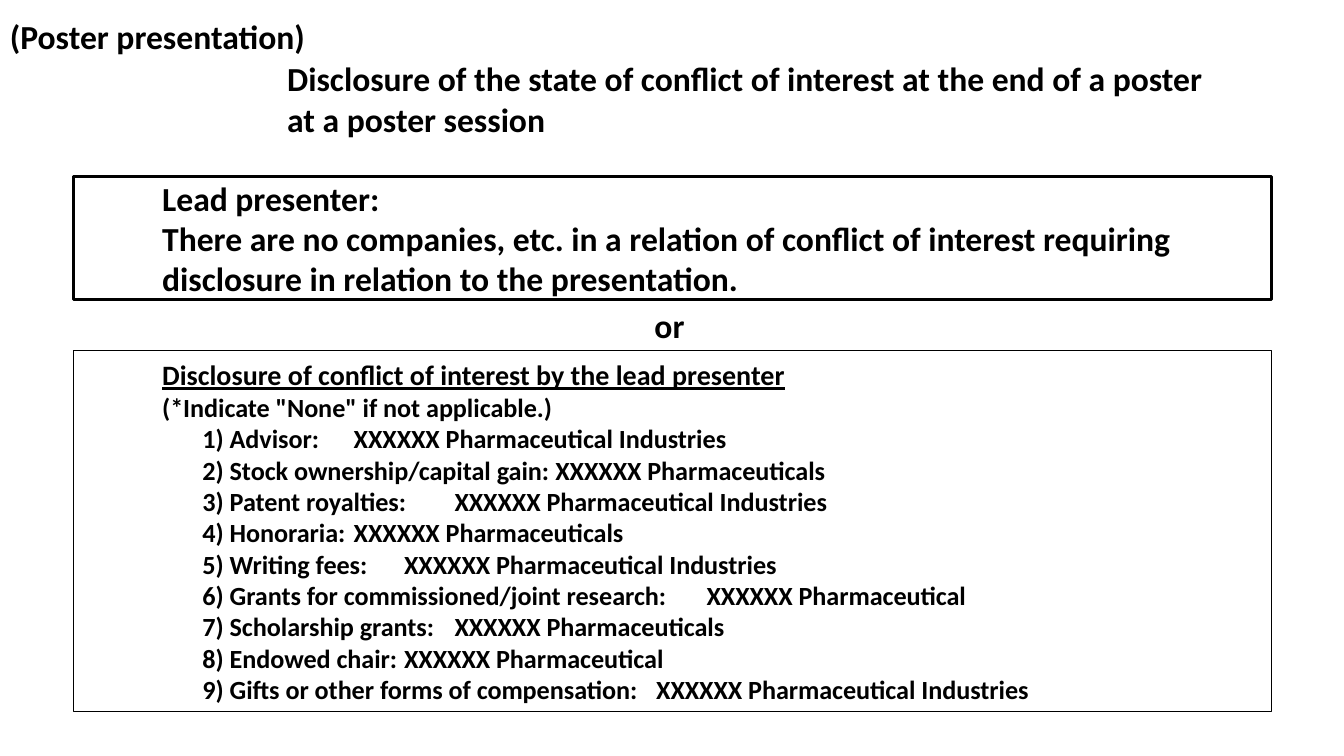
from dataclasses import dataclass

from pptx import Presentation
from pptx import util as u
from pptx.dml.color import RGBColor
from pptx.enum import shapes, text

EMU_PER_PX = 9144
BLACK = RGBColor(0, 0, 0)
FONT = "Calibri"
LARGE, MEDIUM, SMALL = 24, 20, 18.67
TEXT_INDENT, ITEM_INDENT = 78, 118

DISCLOSURES = (
    ("Advisor", "XXXXXX Pharmaceutical Industries"),
    ("Stock ownership/capital gain", "XXXXXX Pharmaceuticals"),
    ("Patent royalties", "XXXXXX Pharmaceutical Industries"),
    ("Honoraria", "XXXXXX Pharmaceuticals"),
    ("Writing fees", "XXXXXX Pharmaceutical Industries"),
    ("Grants for commissioned/joint research", "XXXXXX Pharmaceutical"),
    ("Scholarship grants", "XXXXXX Pharmaceuticals"),
    ("Endowed chair", "XXXXXX Pharmaceutical"),
    ("Gifts or other forms of compensation", "XXXXXX Pharmaceutical Industries"),
)


@dataclass(frozen=True)
class Line:
    words: str
    size: float = LARGE
    indent: int = 0
    underline: bool = False


@dataclass(frozen=True)
class Block:
    left: int
    top: int
    width: int
    height: int
    lines: tuple[Line, ...]
    align: text.PP_ALIGN = text.PP_ALIGN.LEFT
    wrap: bool = True
    border: float = 0


def px(length: int) -> u.Emu:
    return u.Emu(length * EMU_PER_PX)


def write_lines(frame, block: Block) -> None:
    frame.word_wrap = block.wrap
    for index, line in enumerate(block.lines):
        para = frame.add_paragraph() if index else frame.paragraphs[0]
        para.text = line.words
        para.alignment = block.align
        font = para.font
        font.name, font.size, font.bold = FONT, u.Pt(line.size), True
        font.underline = line.underline
        font.color.rgb = BLACK
        if line.indent:
            properties = para._p.get_or_add_pPr()
            properties.set("marL", str(px(line.indent)))
            properties.set("indent", "0")


def draw_block(page, block: Block) -> None:
    area = [px(n) for n in (block.left, block.top, block.width, block.height)]
    if block.border:
        box = page.shapes.add_shape(shapes.MSO_SHAPE.RECTANGLE, *area)
        box.shadow.inherit = False
        box.fill.background()
        box.line.color.rgb = BLACK
        box.line.width = u.Pt(block.border)
        box.text_frame.vertical_anchor = text.MSO_ANCHOR.MIDDLE
    else:
        box = page.shapes.add_textbox(*area)
        box.text_frame.auto_size = text.MSO_AUTO_SIZE.SHAPE_TO_FIT_TEXT
    write_lines(box.text_frame, block)


NO_CONFLICT = (
    Line("Lead presenter:", indent=TEXT_INDENT),
    Line("There are no companies, etc. in a relation of conflict of interest requiring "
         "disclosure in relation to the presentation.", indent=TEXT_INDENT),
)
CONFLICTS = (
    Line("Disclosure of conflict of interest by the lead presenter",
         MEDIUM, TEXT_INDENT, underline=True),
    Line('(*Indicate "None" if not applicable.)', SMALL, TEXT_INDENT),
    *(Line(f"{number}) {topic}:\t{company}", SMALL, ITEM_INDENT)
      for number, (topic, company) in enumerate(DISCLOSURES, 1)),
)
BLOCKS = (
    Block(0, 11, 320, 51, (Line("(Poster presentation)"),)),
    Block(73, 175, 1188, 122, NO_CONFLICT, border=2.25),
    Block(638, 298, 52, 51, (Line("or"),), text.PP_ALIGN.CENTER, wrap=False),
    Block(73, 348, 1188, 358, CONFLICTS, border=0.75),
    Block(275, 53, 959, 91, (
        Line("Disclosure of the state of conflict of interest at the end of a poster "
             "at a poster session"),)),
)


def main() -> None:
    deck = Presentation()
    deck.slide_width, deck.slide_height = px(1333), px(750)
    page = deck.slides.add_slide(deck.slide_layouts[6])
    for block in BLOCKS:
        draw_block(page, block)
    deck.save("out.pptx")


if __name__ == "__main__":
    main()
